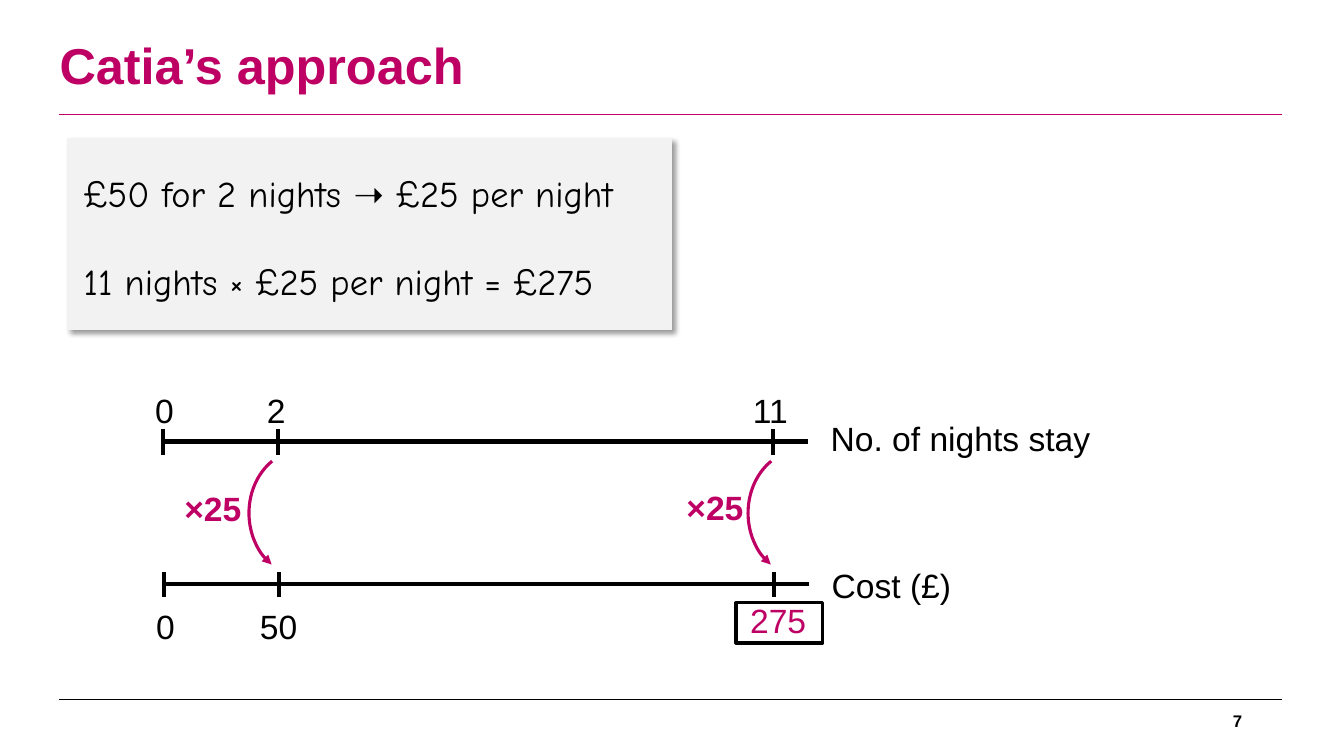
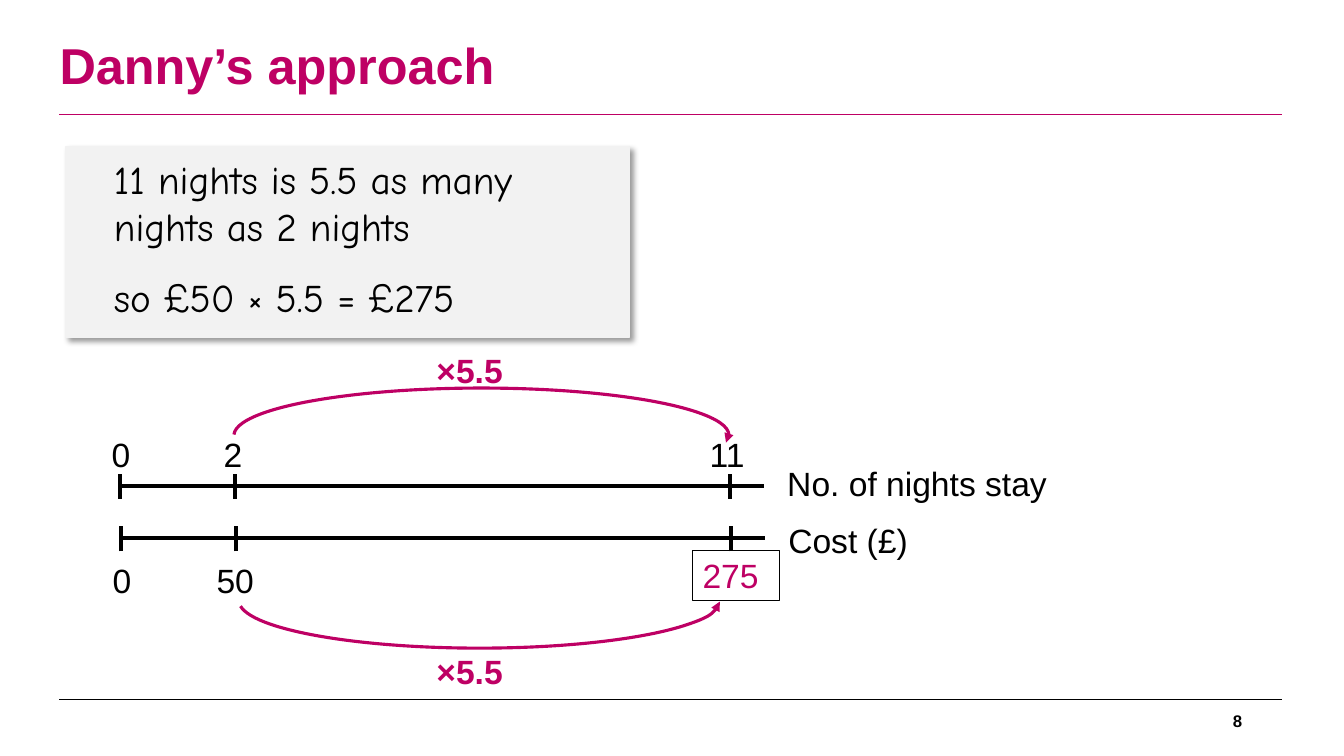
from lxml import etree
from pptx import Presentation
from pptx.dml.color import RGBColor
from pptx.enum.shapes import MSO_CONNECTOR, MSO_SHAPE
from pptx.enum.text import MSO_ANCHOR, MSO_AUTO_SIZE, PP_ALIGN
from pptx.oxml.ns import qn
from pptx.util import Pt

PX = 9144  # EMU, one hundredth of an inch
RECT, ARC = MSO_SHAPE.RECTANGLE, MSO_SHAPE.ARC
STRAIGHT = MSO_CONNECTOR.STRAIGHT
TOP, MIDDLE = MSO_ANCHOR.TOP, MSO_ANCHOR.MIDDLE
LEFT, RIGHT = PP_ALIGN.LEFT, PP_ALIGN.RIGHT
NO_FIT = MSO_AUTO_SIZE.NONE

PINK, BLACK, GREY = "BE0064", "000000", "F2F2F2"
BODY, HAND = "Arial", "Comic Neue"
TITLE_ONLY = 5

SLIDE_SIZE = (1333, 750)
TITLE_BOX = (49, 12, 1000, 111)
NUMBER_BOX = (942, 695, 300, 40)
RULE_X = (59, 1272)
RULES = [(114, PINK), (694, BLACK)]

# Double number line: horizontal offsets from its left end, vertical from its line
LINE_LENGTH = 640
TICKS = (1, 115, 606)
TICK_RISE, TICK_DROP = 12, 13
NAME_OFFSET = 653
NIGHTS = {"name": "No. of nights stay", "name_dy": -28, "value_dy": -56,
          "values": [("0", -17), ("2", 94), ("11", 576)]}
COST = {"name": "Cost (£)", "name_dy": -23, "value_dy": 17,
        "values": [("0", -17), ("50", 86)]}
ANSWER, ANSWER_OFFSET, ANSWER_WIDTH = "275", 569, 86

# Curves run clockwise between two angles; the arrow sits at the named end
LEFT_CURVE = (120, 240.6, "headEnd")
UPPER_CURVE = (180.2, 1.7, "tailEnd")
LOWER_CURVE = (0.2, 178.7, "headEnd")

SLIDES = [
    {
        "number": "7",
        "title": "Catia’s approach",
        "card": {"box": (67, 138, 599, 189), "inset": (16, 32, 0, 0), "size": 26,
                 "lines": [("£50 for 2 nights ➝ £25 per night", 1),
                           ("11 nights × £25 per night = £275", 2)]},
        "left": 161, "nights_y": 438, "cost_y": 579,
        "answer": {"dy": 19, "height": 40, "inset": (14, 0, 0, 6), "border": 2.25},
        "factor": "×25",
        "curves": [((247, 447, 104, 124), LEFT_CURVE, (173, 479)),
                   ((742, 447, 104, 124), LEFT_CURVE, (671, 478))],
    },
    {
        "number": "8",
        "title": "Danny’s approach",
        "card": {"box": (65, 146, 559, 189), "inset": (48, 8, 11, 0), "size": 28,
                 "lines": [("11 nights is 5.5 as many nights as 2 nights", 1),
                           ("so £50 × 5.5 = £275", 1.5)]},
        "left": 118, "nights_y": 482, "cost_y": 534,
        "answer": {"dy": 12, "height": 50, "inset": (10, 0, 0, 0), "border": 0.75},
        "factor": "×5.5",
        "curves": [((232, 385, 491, 94), UPPER_CURVE, (423, 342)),
                   ((237, 549, 477, 94), LOWER_CURVE, (423, 641))],
    },
]


def emu(lengths):
    return [round(length * PX) for length in lengths]


def rgb(value):
    return RGBColor.from_string(value)


def write(frame, lines, size, color=BLACK, font=BODY, bold=False,
          align=LEFT, anchor=TOP, inset=(10, 5, 10, 5)):
    """Fill a text frame with (text, line spacing) paragraphs."""
    frame.word_wrap = True
    frame.auto_size = NO_FIT
    frame.vertical_anchor = anchor
    (frame.margin_left, frame.margin_top,
     frame.margin_right, frame.margin_bottom) = emu(inset)
    for index, (text, spacing) in enumerate(lines):
        paragraph = frame.add_paragraph() if index else frame.paragraphs[0]
        paragraph.alignment = align
        paragraph.line_spacing = float(spacing)
        run = paragraph.add_run()
        run.text = text
        run.font.name, run.font.size, run.font.bold = font, Pt(size), bold
        run.font.color.rgb = rgb(color)


def add_label(slide, text, box, size=24, **style):
    label = slide.shapes.add_textbox(*emu(box))
    write(label.text_frame, [(text, 1)], size, **style)


def add_line(slide, start, end, color, width):
    line = slide.shapes.add_connector(STRAIGHT, *emu(start + end))
    line.line.color.rgb = rgb(color)
    line.line.width = Pt(width)
    etree.SubElement(line.element.spPr, qn("a:effectLst"))


def add_outline(slide, kind, box, color, width, fill=None):
    shape = slide.shapes.add_shape(kind, *emu(box))
    shape.shadow.inherit = False
    if fill:
        shape.fill.solid()
        shape.fill.fore_color.rgb = rgb(fill)
    else:
        shape.fill.background()
    shape.line.color.rgb = rgb(color)
    shape.line.width = Pt(width)
    return shape


def add_frame(slide, title, number):
    """Add the title, rules and page number that every slide has."""
    heading = slide.shapes.title
    heading.left, heading.top, heading.width, heading.height = emu(TITLE_BOX)
    write(heading.text_frame, [(title, 0.9)], 36, PINK, bold=True, anchor=MIDDLE)
    for y, color in RULES:
        add_line(slide, (RULE_X[0], y), (RULE_X[1], y), color, 0.75)
    add_label(slide, number, NUMBER_BOX, 12, bold=True, align=RIGHT, anchor=MIDDLE)


def add_card(slide, box, inset, size, lines):
    card = add_outline(slide, RECT, box, GREY, 1, GREY)
    effects = card.element.spPr.find(qn("a:effectLst"))
    shadow = etree.SubElement(effects, qn("a:outerShdw"), blurRad=str(Pt(4)),
                              dist=str(Pt(3)), dir=str(45 * 60000),
                              algn="tl", rotWithShape="0")
    tint = etree.SubElement(shadow, qn("a:srgbClr"), val=BLACK)
    etree.SubElement(tint, qn("a:alpha"), val="40000")
    write(card.text_frame, lines, size, font=HAND, inset=inset)


def add_number_line(slide, left, y, scale):
    add_line(slide, (left, y), (left + LINE_LENGTH, y), BLACK, 3)
    for tick in TICKS:
        add_line(slide, (left + tick, y + TICK_DROP),
                 (left + tick, y - TICK_RISE), BLACK, 3)
    for value, offset in scale["values"]:
        add_label(slide, value, (left + offset, y + scale["value_dy"], 86, 50))
    add_label(slide, scale["name"],
              (left + NAME_OFFSET, y + scale["name_dy"], 330, 50))


def add_answer(slide, left, y, dy, height, inset, border):
    box = (left + ANSWER_OFFSET, y + dy, ANSWER_WIDTH, height)
    answer = add_outline(slide, RECT, box, BLACK, border)
    write(answer.text_frame, [(ANSWER, 1)], 24, PINK, anchor=MIDDLE, inset=inset)


def add_curve(slide, box, curve, factor, factor_at):
    start, end, arrow_end = curve
    arc = add_outline(slide, ARC, box, PINK, 2.25)
    for index, degrees in enumerate((start, end)):
        arc.adjustments[index] = degrees * 0.6  # 60000 units a degree, over 100000
    etree.SubElement(arc.element.spPr.find(qn("a:ln")), qn("a:" + arrow_end),
                     type="triangle")
    add_label(slide, factor, factor_at + (141, 50), color=PINK, bold=True)


def main():
    deck = Presentation()
    deck.slide_width, deck.slide_height = emu(SLIDE_SIZE)
    for content in SLIDES:
        slide = deck.slides.add_slide(deck.slide_layouts[TITLE_ONLY])
        left, cost_y = content["left"], content["cost_y"]
        add_frame(slide, content["title"], content["number"])
        add_card(slide, **content["card"])
        add_number_line(slide, left, content["nights_y"], NIGHTS)
        add_number_line(slide, left + 1, cost_y, COST)
        add_answer(slide, left, cost_y, **content["answer"])
        for box, curve, factor_at in content["curves"]:
            add_curve(slide, box, curve, content["factor"], factor_at)
    deck.save("out.pptx")


if __name__ == "__main__":
    main()
